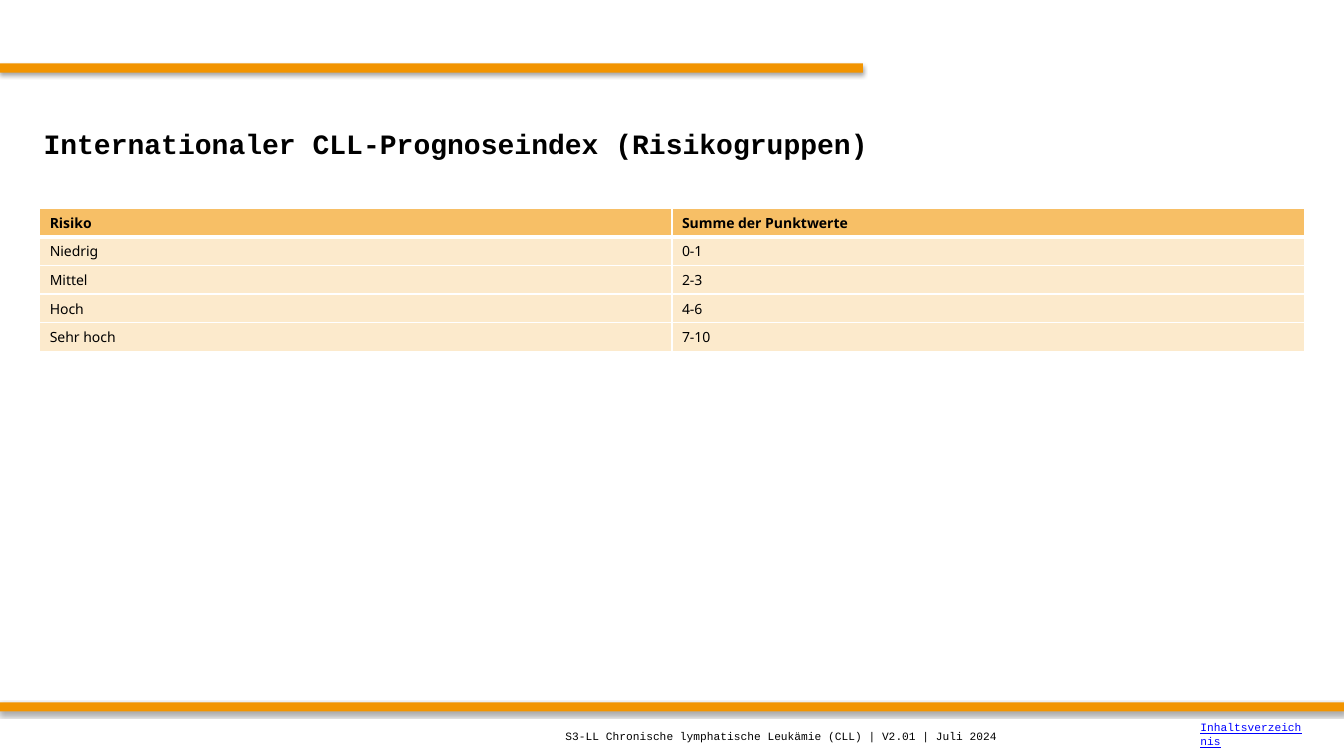
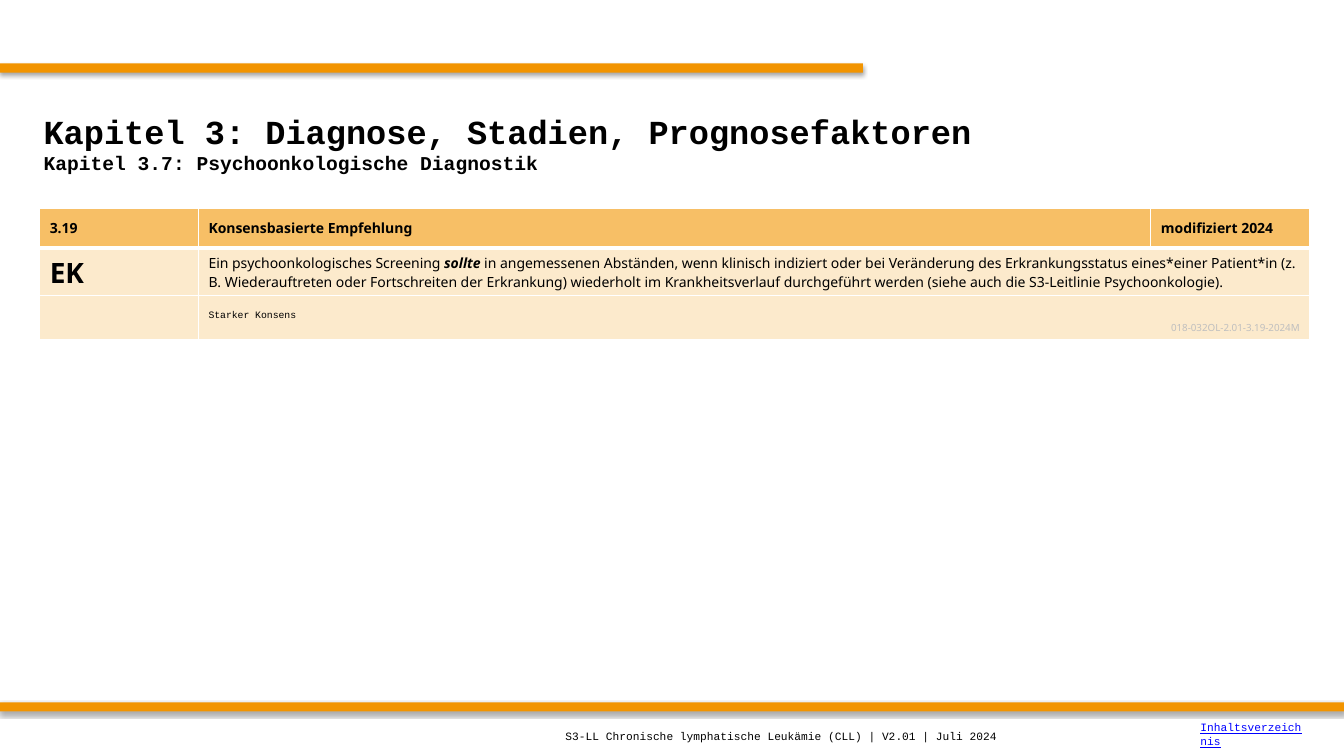
from lxml.etree import SubElement
from pptx import Presentation
from pptx.dml.color import RGBColor as Rgb
from pptx.enum.shapes import MSO_SHAPE as Preset
from pptx.enum.text import MSO_ANCHOR as Anchor, PP_ALIGN as Align
from pptx.oxml.ns import qn
from pptx.util import Cm, Inches, Pt

COLOURS = {
    "band": "F29400",
    "header": "F7BF66",
    "body": "FCEACC",
    "border": "FFFFFF",
    "shadow": "000000",
    "text": "000000",
    "link": "0000FF",
    "code": "BFBFBF",
}
WIDTH, HEIGHT = Inches(13.333), Inches(7.5)
MARGIN = Cm(1)
TABLE_TOP = Cm(5.25)
MONO, SANS = "Courier New", "Noto Sans"

FOOTER = {"name": MONO, "size": Pt(8)}
LINK = FOOTER | {"underline": True, "colour": "link"}
TITLE = {"name": MONO, "size": Pt(20), "bold": True}
CHAPTER = TITLE | {"size": Pt(24)}
SUBTITLE = TITLE | {"size": Pt(14)}
BODY = {"name": SANS, "size": Pt(10), "bold": False}
HEADER = BODY | {"bold": True}
STRESSED = HEADER | {"italic": True}
GRADE = HEADER | {"size": Pt(20)}
CONSENSUS = {"name": MONO, "size": Pt(7), "bold": False}
CODE = CONSENSUS | {"name": SANS, "colour": "code"}


def add_run(paragraph, text, style):
    run = paragraph.add_run()
    run.text = text
    values = {"colour": "text"} | style
    run.font.color.rgb = Rgb.from_string(COLOURS[values.pop("colour")])
    for attribute, value in values.items():
        setattr(run.font, attribute, value)


def write(frame, lines, **layout):
    for index, runs in enumerate(lines):
        paragraph = frame.paragraphs[0] if index == 0 else frame.add_paragraph()
        for attribute, value in layout.items():
            setattr(paragraph, attribute, value)
        for text, style in runs:
            add_run(paragraph, text, style)


def add_text(slide, left, top, width, height, lines):
    frame = slide.shapes.add_textbox(left, top, width, height).text_frame
    frame.word_wrap = True
    frame.vertical_anchor = Anchor.MIDDLE
    write(frame, lines)


def add_colour(parent, colour):
    return SubElement(parent, qn("a:srgbClr"), val=COLOURS[colour])


def add_band(slide, top, width):
    band = slide.shapes.add_shape(Preset.RECTANGLE, 0, top, width, Cm(0.23))
    band.fill.solid()
    band.fill.fore_color.rgb = Rgb.from_string(COLOURS["band"])
    band.line.fill.background()
    band.shadow.inherit = False
    effects = band._element.spPr.find(qn("a:effectLst"))
    shadow = SubElement(effects, qn("a:outerShdw"), blurRad=str(Pt(3.1)),
                        dist=str(Pt(1.8)), dir="5400000", rotWithShape="0")
    SubElement(add_colour(shadow, "shadow"), qn("a:alpha"), val="35000")


def set_borders(cell, row):
    properties = cell._tc.get_or_add_tcPr()
    widths = {"L": 1, "R": 1, "T": 3 if row == 1 else 1, "B": 3 if row == 0 else 1}
    for side, points in widths.items():
        line = SubElement(properties, qn(f"a:ln{side}"), w=str(Pt(points)))
        add_colour(SubElement(line, qn("a:solidFill")), "border")


def add_table(slide, columns, rows):
    table = slide.shapes.add_table(len(rows), len(columns), MARGIN, TABLE_TOP,
                                   sum(columns), sum(rows)).table
    table.horz_banding = False
    for column, width in zip(table.columns, columns):
        column.width = width
    for index, (row, height) in enumerate(zip(table.rows, rows)):
        row.height = height
        for cell in row.cells:
            set_borders(cell, index)
            cell.fill.solid()
            colour = "header" if index == 0 else "body"
            cell.fill.fore_color.rgb = Rgb.from_string(COLOURS[colour])
    return table


def add_page(deck, title):
    slide = deck.slides.add_slide(deck.slide_layouts[6])
    add_band(slide, Cm(1.6), int(WIDTH * 0.642))
    add_band(slide, Cm(17.7), WIDTH)
    add_text(slide, WIDTH // 40, HEIGHT // 9, int(WIDTH * 0.95), Cm(2.97), title)
    add_text(slide, Cm(14), Cm(18.05), Cm(14), Cm(1),
             [[("S3-LL Chronische lymphatische Leukämie (CLL) | V2.01 | Juli 2024", FOOTER)]])
    add_text(slide, Cm(30), Cm(18), Cm(3.1), Cm(1), [[("Inhaltsverzeichnis", LINK)]])
    return slide


def add_risk_groups(deck):
    slide = add_page(deck, [[("Internationaler CLL-Prognoseindex (Risikogruppen)", TITLE)]])
    groups = [
        ("Risiko", "Summe der Punktwerte"),
        ("Niedrig", "0-1"),
        ("Mittel", "2-3"),
        ("Hoch", "4-6"),
        ("Sehr hoch", "7-10"),
    ]
    table = add_table(slide, [(WIDTH - 2 * MARGIN) // 2] * 2, [Cm(0.72)] * len(groups))
    for row, group in enumerate(groups):
        for column, text in enumerate(group):
            style = HEADER if row == 0 else BODY
            write(table.cell(row, column).text_frame, [[(text, style)]], space_after=Pt(5))


def add_recommendation(deck):
    slide = add_page(deck, [
        [("Kapitel 3: Diagnose, Stadien, Prognosefaktoren", CHAPTER)],
        [("Kapitel 3.7: Psychoonkologische Diagnostik", SUBTITLE)],
    ])
    table = add_table(slide, [Cm(4), Cm(24), Cm(4)], [Cm(1), Cm(1.2), Cm(1.1)])
    for row in (1, 2):
        table.cell(row, 1).merge(table.cell(row, 2))
    for column, text in enumerate(("3.19", "Konsensbasierte Empfehlung", "modifiziert 2024")):
        heading = table.cell(0, column)
        heading.vertical_anchor = Anchor.MIDDLE
        write(heading.text_frame, [[(text, HEADER)]])
    write(table.cell(1, 0).text_frame, [[("EK", GRADE)]])
    write(table.cell(1, 1).text_frame, [[
        ("Ein psychoonkologisches Screening ", BODY),
        ("sollte", STRESSED),
        (" in angemessenen Abständen, wenn klinisch indiziert oder bei Veränderung des "
         "Erkrankungsstatus eines*einer Patient*in (z. B. Wiederauftreten oder Fortschreiten "
         "der Erkrankung) wiederholt im Krankheitsverlauf durchgeführt werden (siehe auch die "
         "S3-Leitlinie Psychoonkologie).", BODY),
    ]])
    consensus = table.cell(2, 1)
    consensus.vertical_anchor = Anchor.BOTTOM
    write(consensus.text_frame, [
        [("Starker Konsens", CONSENSUS)],
        [("018-032OL-2.01-3.19-2024M", CODE)],
    ])
    consensus.text_frame.paragraphs[1].alignment = Align.RIGHT


def main():
    deck = Presentation()
    deck.slide_width, deck.slide_height = WIDTH, HEIGHT
    add_risk_groups(deck)
    add_recommendation(deck)
    deck.save("out.pptx")


if __name__ == "__main__":
    main()
